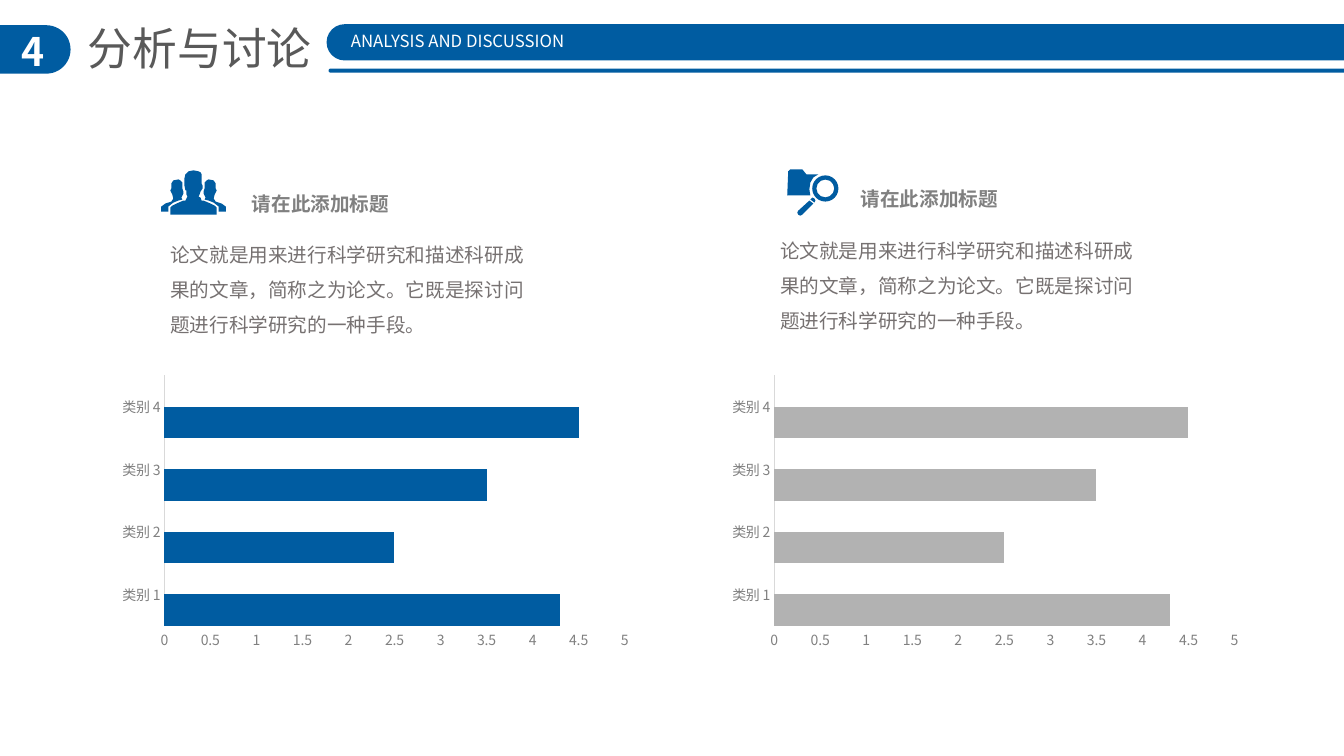
from dataclasses import dataclass

import lxml.etree
import pptx
import pptx.chart.data
import pptx.dml.color
import pptx.enum.chart
import pptx.enum.shapes
import pptx.enum.text
import pptx.util

Pt = pptx.util.Pt
Color = pptx.dml.color.RGBColor
Shape = pptx.enum.shapes.MSO_SHAPE
Align = pptx.enum.text.PP_ALIGN

BLUE = Color(0x00, 0x5C, 0xA1)
SILVER = Color(0xB2, 0xB2, 0xB2)
ORANGE = Color(0xED, 0x7D, 0x31)
ASH = Color(0xA5, 0xA5, 0xA5)
PALE = Color(0xD9, 0xD9, 0xD9)
GRAY = Color(0x80, 0x80, 0x80)
STONE = Color(0x76, 0x71, 0x71)
DARK = Color(0x59, 0x59, 0x59)
WHITE = Color(0xFF, 0xFF, 0xFF)
FONT = "Noto Sans CJK SC"

Path = list[tuple[int, int]]


@dataclass
class Box:
    left: float
    top: float
    width: float
    height: float

    def place(self) -> tuple:
        return Pt(self.left), Pt(self.top), Pt(self.width), Pt(self.height)


@dataclass
class Style:
    size: float
    color: Color
    bold: bool = False
    align: Align = Align.LEFT
    wrap: bool = False
    space: float = 1.0


@dataclass
class Panel:
    head: Box
    body: Box
    chart: Box
    color: Color


HEAD = "请在此添加标题"
BODY = "论文就是用来进行科学研究和描述科研成果的文章，简称之为论文。它既是探讨问题进行科学研究的一种手段。"
GROUPS = ["类别 1", "类别 2", "类别 3", "类别 4"]
VALUES = [4.3, 2.5, 3.5, 4.5]

PANELS = [
    Panel(Box(172.8, 133.2, 113.8, 24.5), Box(114.5, 161.3, 270, 83.5),
          Box(79.9, 264.2, 376.6, 203.8), BLUE),
    Panel(Box(607.7, 130.3, 113.8, 24.5), Box(550.1, 158.4, 276.5, 83.5),
          Box(515.5, 264.2, 376.6, 203.8), SILVER),
]
BARS = [
    Box(-20.2, 18, 70.6, 34.6),
    Box(233.3, 17.3, 794.2, 25.9),
    Box(234.7, 49, 794.2, 2.9),
]

LEFT_MAN: Path = [
    (181, 184), (181, 181), (179, 179), (177, 178), (172, 179), (170, 182),
    (170, 187), (169, 189), (171, 193), (172, 197), (170, 200), (164, 202),
    (160, 205), (160, 210), (167, 210), (167, 205), (172, 201), (177, 199),
    (181, 198), (180, 196), (182, 192), (182, 190), (181, 187)]
RIGHT_MAN: Path = [(384 - x, y) for x, y in LEFT_MAN]
MID_MAN: Path = [
    (200, 173), (200, 182), (201, 184), (201, 187), (199, 190), (198, 193),
    (197, 195), (199, 196), (200, 199), (202, 199), (209, 202), (213, 204),
    (215, 206), (215, 213), (169, 213), (169, 206), (171, 204), (175, 202),
    (182, 199), (184, 199), (186, 195), (185, 193), (185, 189), (184, 189),
    (183, 184), (183, 177), (184, 173), (187, 170), (192, 169), (197, 170),
    (199, 171)]
FOLDER: Path = [
    (807, 176), (812, 173), (800, 173), (796, 168), (784, 168), (782, 170),
    (781, 194), (804, 194), (803, 188), (804, 181)]
KNOB: Path = [(808, 197), (806, 196), (804, 198), (808, 201), (809, 199)]
GRIP: Path = [
    (792, 209), (791, 211), (792, 213), (794, 214), (796, 213), (807, 202),
    (803, 199)]
ICONS = [[LEFT_MAN, RIGHT_MAN], [MID_MAN], [FOLDER], [KNOB, GRIP]]
RING = Box(580.2, 125.3, 18.7, 18.7)


def paint(shape) -> None:
    shape.shadow.inherit = False
    shape.fill.solid()
    shape.fill.fore_color.rgb = BLUE
    shape.line.fill.background()


def draw(slide, kind: Shape, box: Box, bend: float) -> None:
    shape = slide.shapes.add_shape(kind, *box.place())
    shape.adjustments[0] = bend
    paint(shape)


def trace(slide, paths: list[Path]) -> None:
    pen = slide.shapes.build_freeform(*paths[0][0], scale=Pt(0.72))
    pen.add_line_segments(paths[0][1:])
    for path in paths[1:]:
        pen.move_to(*path[0])
        pen.add_line_segments(path[1:])
    paint(pen.convert_to_shape())


def fill(shape, text: str, style: Style) -> None:
    frame = shape.text_frame
    frame.text = text
    frame.word_wrap = style.wrap
    frame.auto_size = pptx.enum.text.MSO_AUTO_SIZE.NONE
    frame.vertical_anchor = pptx.enum.text.MSO_ANCHOR.TOP
    line = frame.paragraphs[0]
    line.alignment = style.align
    line.line_spacing = style.space
    line.font.name = FONT
    line.font.size = Pt(style.size)
    line.font.bold = style.bold
    line.font.color.rgb = style.color


def write(slide, box: Box, text: str, style: Style) -> None:
    fill(slide.shapes.add_textbox(*box.place()), text, style)


def plot(slide, box: Box, color: Color) -> None:
    data = pptx.chart.data.CategoryChartData()
    data.categories = GROUPS
    data.add_series("Series 1", VALUES)
    data.add_series("Series 2", [None] * 4)
    data.add_series("Series 3", [None] * 4)
    kind = pptx.enum.chart.XL_CHART_TYPE.BAR_CLUSTERED
    chart = slide.shapes.add_chart(kind, *box.place(), data).chart
    chart.has_legend = False
    chart.has_title = False
    chart.font.size = Pt(10)
    chart.font.name = "Calibri"
    bars = chart.plots[0]
    bars.vary_by_categories = False
    bars.gap_width = 0
    bars.overlap = 50
    for row, tint in zip(bars.series, (color, ORANGE, ASH)):
        row.format.fill.solid()
        row.format.fill.fore_color.rgb = tint
    for axis in (chart.category_axis, chart.value_axis):
        axis.has_major_gridlines = False
        axis.major_tick_mark = pptx.enum.chart.XL_TICK_MARK.NONE
        axis.minor_tick_mark = pptx.enum.chart.XL_TICK_MARK.NONE
        font = axis.tick_labels.font
        font.size = Pt(10)
        font.name = FONT
        font.color.rgb = GRAY
    chart.category_axis.format.line.color.rgb = PALE
    chart.category_axis.format.line.width = Pt(0.75)
    chart.value_axis.format.line.fill.background()
    chart.value_axis.minimum_scale = 0
    chart.value_axis.maximum_scale = 5
    chart.value_axis.major_unit = 0.5


def main() -> None:
    deck = pptx.Presentation()
    deck.slide_width, deck.slide_height = Pt(960), Pt(540)
    slide = deck.slides.add_slide(deck.slide_layouts[5])
    title = slide.shapes.title
    title.left, title.top, title.width, title.height = Box(55.4, 11.5, 176.4, 46.1).place()
    fill(title, "分析与讨论", Style(32, DARK))
    for bar in BARS:
        draw(slide, Shape.ROUNDED_RECTANGLE, bar, 0.5)
    write(slide, Box(5, 15.8, 36.7, 41), "4", Style(28, WHITE, True, Align.CENTER))
    write(slide, Box(236.9, 18.7, 180, 21.6), "ANALYSIS AND DISCUSSION",
          Style(12, WHITE, align=Align.CENTER))
    for paths in ICONS:
        trace(slide, paths)
    draw(slide, Shape.DONUT, RING, 0.16)
    for panel in PANELS:
        write(slide, panel.head, HEAD, Style(14, GRAY, True))
        write(slide, panel.body, BODY, Style(14, STONE, wrap=True, space=1.5))
        plot(slide, panel.chart, panel.color)
    deck.save("out.pptx")


if __name__ == "__main__":
    main()
